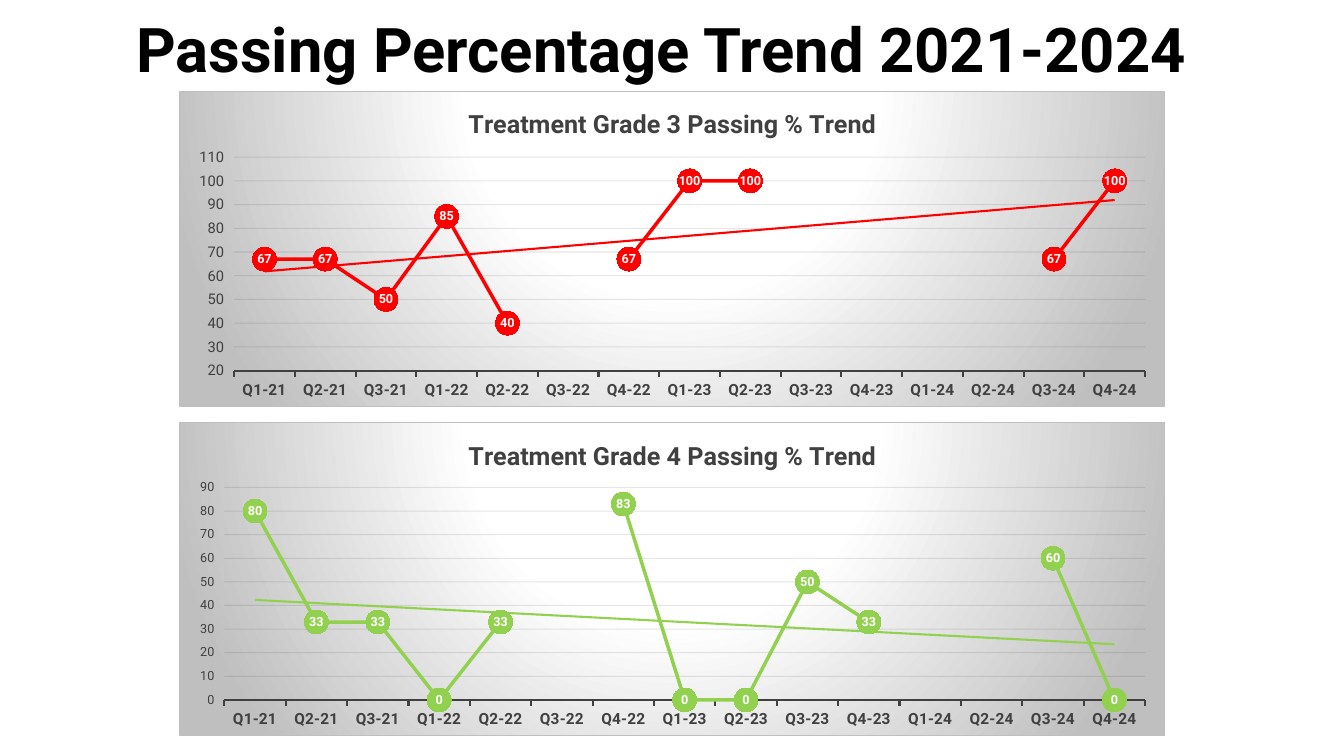
import dataclasses
import typing

import pptx
import pptx.chart.axis
import pptx.chart.chart
import pptx.chart.data
import pptx.chart.series
import pptx.dml.color
import pptx.enum.chart
import pptx.enum.dml
import pptx.enum.text
import pptx.oxml
import pptx.oxml.ns
import pptx.slide
import pptx.text.text
import pptx.util


@dataclasses.dataclass(frozen=True)
class Theme:
    font: str = "Roboto"
    heading: str = "000000"
    ink: str = "404040"
    grid: str = "0D0D0D"
    center: str = "FFFFFF"
    edge: str = "BFBFBF"
    label: str = "FFFFFF"
    heading_size: float = 44
    trend_title_size: float = 18
    quarter_size: float = 11
    label_size: float = 9
    base_size: float = 10


@dataclasses.dataclass(frozen=True)
class PlotArea:
    x: float
    y: float
    w: float
    h: float


@dataclasses.dataclass(frozen=True)
class GradeTrend:
    title: str
    color: str
    passing: tuple[typing.Optional[int], ...]
    top: float
    height: float
    low: int
    high: int
    scale_size: float
    plot_area: PlotArea


THEME = Theme()
QUARTERS = [f"Q{quarter}-{year}" for year in range(21, 25) for quarter in range(1, 5)
            if (quarter, year) != (4, 21)]
TRENDS = [
    GradeTrend("Treatment Grade 3 Passing % Trend", "FF0000",
               (67, 67, 50, 85, 40, None, 67, 100, 100, None, None, None, None, 67, 100),
               64.8, 226.1, 20, 110, 10.5, PlotArea(0.055, 0.209, 0.925, 0.677)),
    GradeTrend("Treatment Grade 4 Passing % Trend", "92D050",
               (80, 33, 33, 0, 33, None, 83, 0, 0, 50, 33, None, None, 60, 0),
               301.7, 223.9, 0, 90, 9, PlotArea(0.045, 0.207, 0.935, 0.68)),
]
CHART_LEFT, CHART_WIDTH = 128.2, 704.2
NAMESPACES = pptx.oxml.ns.nsdecls("c", "a")


def rgb(color: str) -> pptx.dml.color.RGBColor:
    return pptx.dml.color.RGBColor.from_string(color)


def style_font(font: pptx.text.text.Font, size: float, color: str, bold: bool = False) -> None:
    font.name = THEME.font
    font.size = pptx.util.Pt(size)
    font.bold = bold
    font.color.rgb = rgb(color)


def add_heading(slide: pptx.slide.Slide, wording: str) -> None:
    heading = slide.shapes.title
    heading.left, heading.top = pptx.util.Pt(50.4), pptx.util.Pt(-14.4)
    heading.width, heading.height = pptx.util.Pt(844.6), pptx.util.Pt(79.2)
    frame = heading.text_frame
    frame.word_wrap = True
    frame.auto_size = pptx.enum.text.MSO_AUTO_SIZE.NONE
    frame.vertical_anchor = pptx.enum.text.MSO_ANCHOR.BOTTOM
    paragraph = frame.paragraphs[0]
    paragraph.alignment = pptx.enum.text.PP_ALIGN.CENTER
    paragraph.line_spacing = 0.9
    run = paragraph.add_run()
    run.text = wording
    style_font(run.font, THEME.heading_size, THEME.heading, True)


def add_background(chart: pptx.chart.chart.Chart) -> None:
    stops = "".join(
        f'<a:gs pos="{position}"><a:srgbClr val="{color}"/></a:gs>'
        for position, color in ((0, THEME.center), (39000, THEME.center), (100000, THEME.edge)))
    background = pptx.oxml.parse_xml(
        f'<c:spPr {NAMESPACES}><a:gradFill><a:gsLst>{stops}</a:gsLst><a:path path="circle">'
        '<a:fillToRect l="50000" t="-80000" r="50000" b="180000"/></a:path></a:gradFill>'
        f'<a:ln w="{pptx.util.Pt(0.75)}"><a:solidFill><a:srgbClr val="{THEME.edge}"/>'
        '</a:solidFill></a:ln></c:spPr>')
    chart._chartSpace.chart.addnext(background)


def place_plot_area(chart: pptx.chart.chart.Chart, area: PlotArea) -> None:
    plot_area = chart._chartSpace.chart.plotArea
    for automatic in plot_area.findall(pptx.oxml.ns.qn("c:layout")):
        plot_area.remove(automatic)
    sizes = "".join(f'<c:{side} val="{share}"/>'
                    for side, share in dataclasses.asdict(area).items())
    plot_area.insert(0, pptx.oxml.parse_xml(
        f'<c:layout {NAMESPACES}><c:manualLayout><c:layoutTarget val="inner"/>'
        f'<c:xMode val="edge"/><c:yMode val="edge"/>{sizes}</c:manualLayout></c:layout>'))


def style_axes(chart: pptx.chart.chart.Chart, trend: GradeTrend) -> None:
    quarters = chart.category_axis
    quarters.major_tick_mark = pptx.enum.chart.XL_TICK_MARK.OUTSIDE
    quarters.has_major_gridlines = False
    quarters.format.line.width = pptx.util.Pt(1.5)
    quarters.format.line.color.rgb = rgb(THEME.ink)
    style_font(quarters.tick_labels.font, THEME.quarter_size, THEME.ink, True)

    scale = chart.value_axis
    scale.minimum_scale, scale.maximum_scale, scale.major_unit = trend.low, trend.high, 10
    scale.major_tick_mark = pptx.enum.chart.XL_TICK_MARK.OUTSIDE
    scale.format.line.fill.background()
    style_font(scale.tick_labels.font, trend.scale_size, THEME.ink)
    scale.has_major_gridlines = True
    grid = scale.major_gridlines.format.line
    grid.width = pptx.util.Pt(0.75)
    grid.color.rgb = rgb(THEME.grid)
    grid_color = scale.major_gridlines._xAx.find(
        f'{pptx.oxml.ns.qn("c:majorGridlines")}//{pptx.oxml.ns.qn("a:srgbClr")}')
    grid_color.append(pptx.oxml.parse_xml(f'<a:alpha {NAMESPACES} val="10000"/>'))


def style_passing(passing: pptx.chart.series.LineSeries, color: str) -> None:
    passing.smooth = False
    passing.format.line.width = pptx.util.Pt(2.5)
    passing.format.line.color.rgb = rgb(color)
    marker = passing.marker
    marker.style = pptx.enum.chart.XL_MARKER_STYLE.CIRCLE
    marker.size = 17
    marker.format.fill.solid()
    marker.format.fill.fore_color.rgb = rgb(color)
    marker.format.line.fill.background()
    labels = passing.data_labels
    labels.show_value = True
    labels.position = pptx.enum.chart.XL_LABEL_POSITION.CENTER
    style_font(labels.font, THEME.label_size, THEME.label, True)
    passing._element.find(pptx.oxml.ns.qn("c:cat")).addprevious(pptx.oxml.parse_xml(
        f'<c:trendline {NAMESPACES}><c:spPr><a:ln w="{pptx.util.Pt(1.5)}"><a:solidFill>'
        f'<a:srgbClr val="{color}"/></a:solidFill></a:ln></c:spPr>'
        '<c:trendlineType val="linear"/><c:dispRSqr val="0"/><c:dispEq val="0"/></c:trendline>'))


def add_trend(slide: pptx.slide.Slide, trend: GradeTrend) -> None:
    results = pptx.chart.data.CategoryChartData(number_format="0")
    results.categories = QUARTERS
    results.add_series("Series 1", trend.passing)
    chart = slide.shapes.add_chart(
        pptx.enum.chart.XL_CHART_TYPE.LINE_MARKERS,
        pptx.util.Pt(CHART_LEFT), pptx.util.Pt(trend.top),
        pptx.util.Pt(CHART_WIDTH), pptx.util.Pt(trend.height), results).chart
    style_font(chart.font, THEME.base_size, THEME.heading)
    chart.has_legend = False
    chart.has_title = True
    chart.chart_title.include_in_layout = False
    run = chart.chart_title.text_frame.paragraphs[0].add_run()
    run.text = trend.title
    style_font(run.font, THEME.trend_title_size, THEME.ink, True)
    chart.plots[0].vary_by_categories = False
    add_background(chart)
    place_plot_area(chart, trend.plot_area)
    style_axes(chart, trend)
    style_passing(chart.plots[0].series[0], trend.color)


def main() -> None:
    presentation = pptx.Presentation()
    presentation.slide_width = pptx.util.Pt(960)
    presentation.slide_height = pptx.util.Pt(540)
    slide = presentation.slides.add_slide(presentation.slide_layouts.get_by_name("Title Only"))
    add_heading(slide, "Passing Percentage Trend 2021-2024")
    for trend in TRENDS:
        add_trend(slide, trend)
    presentation.save("out.pptx")


if __name__ == "__main__":
    main()
